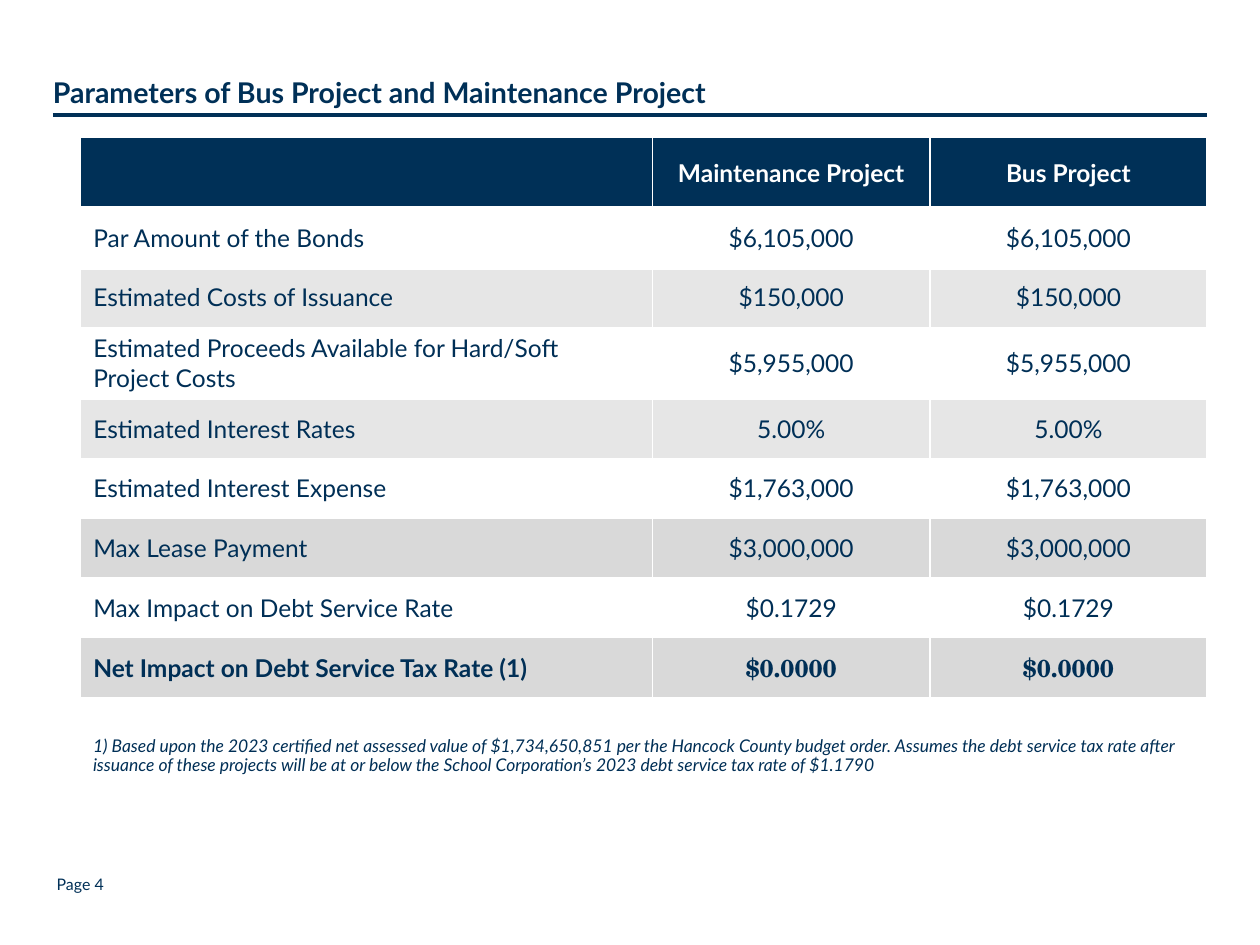
from dataclasses import dataclass
from typing import Optional

from lxml.etree import SubElement
from pptx import Presentation
from pptx.dml.color import RGBColor
from pptx.enum.shapes import MSO_CONNECTOR
from pptx.enum.text import MSO_ANCHOR, PP_ALIGN
from pptx.oxml.ns import qn
from pptx.util import Inches, Pt


@dataclass(frozen=True)
class Theme:
    navy: str = "003057"
    ink: str = "002F56"
    white: str = "FFFFFF"
    light: str = "E6E6E6"
    gray: str = "D9D9D9"
    sans: str = "Lato"
    serif: str = "TeX Gyre Schola"
    title: float = 16.3
    table: float = 14
    note: float = 10
    page: float = 9.1
    thin: float = 1
    thick: float = 3


THEME = Theme()


@dataclass(frozen=True)
class Style:
    size: float
    color: str
    bold: bool = False
    italic: bool = False
    face: str = THEME.sans


@dataclass(frozen=True)
class Label:
    text: str
    box: tuple[float, float, float, float]
    style: Style
    left: float = 0
    anchor: MSO_ANCHOR = MSO_ANCHOR.BOTTOM
    spacing: float = 0.9
    wrap: bool = True


@dataclass(frozen=True)
class Row:
    label: str
    values: tuple[str, str]
    fill: Optional[str] = None
    height: float = 0.0
    color: str = THEME.ink
    bold: bool = False
    face: str = THEME.sans
    top: float = THEME.thin
    bottom: float = THEME.thin


HIGH = 0.56
FRAME = (0.64, 1.09, 8.95, 4.44)
WIDTHS = (4.54, 2.2, 2.2)
ROWS = (
    Row("", ("Maintenance Project", "Bus Project"), THEME.navy, HIGH,
        THEME.white, True, bottom=THEME.thick),
    Row("Par Amount of the Bonds", ("$6,105,000",) * 2,
        top=THEME.thick, bottom=THEME.thick),
    Row("Estimated Costs of Issuance", ("$150,000",) * 2, THEME.light, top=THEME.thick),
    Row("Estimated Proceeds Available for Hard/Soft Project Costs",
        ("$5,955,000",) * 2, height=HIGH),
    Row("Estimated Interest Rates", ("5.00%",) * 2, THEME.light),
    Row("Estimated Interest Expense", ("$1,763,000",) * 2),
    Row("Max Lease Payment", ("$3,000,000",) * 2, THEME.gray),
    Row("Max Impact on Debt Service Rate", ("$0.1729",) * 2, THEME.white),
    Row("Net Impact on Debt Service Tax Rate (1)", ("$0.0000",) * 2, THEME.gray,
        bold=True, face=THEME.serif),
)
LABELS = (
    Label("Page 4", (0.45, 6.89, 1.07, 0.25), Style(THEME.page, THEME.navy),
          anchor=MSO_ANCHOR.TOP, spacing=1.0),
    Label("Parameters of Bus Project and Maintenance Project", (0.42, 0.36, 9.16, 0.56),
          Style(THEME.title, THEME.navy, bold=True)),
    Label("1) Based upon the 2023 certified net assessed value of $1,734,650,851 per the "
          "Hancock County budget order. Assumes the debt service tax rate after issuance "
          "of these projects will be at or below the School Corporation’s 2023 debt "
          "service tax rate of $1.1790", (0.64, 5.53, 9.24, 0.67),
          Style(THEME.note, THEME.ink, italic=True), left=0.1),
)


def format_runs(line, style: Style) -> None:
    for run in line.runs:
        font = run.font
        font.name, font.size = style.face, Pt(style.size)
        font.bold, font.italic = style.bold, style.italic
        font.color.rgb = RGBColor.from_string(style.color)


def draw_label(slide, label: Label) -> None:
    frame = slide.shapes.add_textbox(*map(Inches, label.box)).text_frame
    frame.word_wrap = label.wrap
    frame.vertical_anchor = label.anchor
    frame.margin_left = Inches(label.left)
    frame.text = label.text
    line = frame.paragraphs[0]
    line.line_spacing = label.spacing
    format_runs(line, label.style)


def draw_rule(slide) -> None:
    rule = slide.shapes.add_connector(
        MSO_CONNECTOR.STRAIGHT, Inches(0.42), Inches(0.91), Inches(9.58), Inches(0.91))
    rule.line.color.rgb = RGBColor.from_string(THEME.navy)
    rule.line.width = Pt(2.25)
    SubElement(rule._element.spPr, qn("a:effectLst"))


def set_borders(cell, row: Row) -> None:
    props = cell._tc.get_or_add_tcPr()
    sides = {"L": THEME.thin, "R": THEME.thin, "T": row.top, "B": row.bottom}
    for spot, (side, width) in enumerate(sides.items()):
        edge = SubElement(props, qn(f"a:ln{side}"), w=str(Pt(width)))
        fill = SubElement(edge, qn("a:solidFill"))
        SubElement(fill, qn("a:srgbClr"), val=THEME.white)
        props.insert(spot, edge)


def draw_cell(cell, text: str, row: Row, first: bool) -> None:
    cell.vertical_anchor = MSO_ANCHOR.MIDDLE
    if row.fill:
        cell.fill.solid()
        cell.fill.fore_color.rgb = RGBColor.from_string(row.fill)
    else:
        cell.fill.background()
    set_borders(cell, row)
    cell.text_frame.text = text
    line = cell.text_frame.paragraphs[0]
    line.alignment = PP_ALIGN.LEFT if first else PP_ALIGN.CENTER
    face = THEME.sans if first else row.face
    format_runs(line, Style(THEME.table, row.color, row.bold, face=face))


def draw_table(slide) -> None:
    shape = slide.shapes.add_table(len(ROWS), len(WIDTHS), *map(Inches, FRAME))
    table = shape.table
    table.horz_banding = False
    for column, width in zip(table.columns, WIDTHS):
        column.width = Inches(width)
    fixed = [row.height for row in ROWS if row.height]
    even = (FRAME[3] - sum(fixed)) / (len(ROWS) - len(fixed))
    for index, row in enumerate(ROWS):
        table.rows[index].height = Inches(row.height or even)
        for place, text in enumerate((row.label, *row.values)):
            draw_cell(table.cell(index, place), text, row, place == 0)


def main() -> None:
    """Build the slide of bond parameters for both projects."""
    deck = Presentation()
    deck.slide_width, deck.slide_height = Inches(10), Inches(7.5)
    slide = deck.slides.add_slide(deck.slide_layouts[6])
    draw_rule(slide)
    draw_table(slide)
    for label in LABELS:
        draw_label(slide, label)
    deck.save("out.pptx")


if __name__ == "__main__":
    main()
